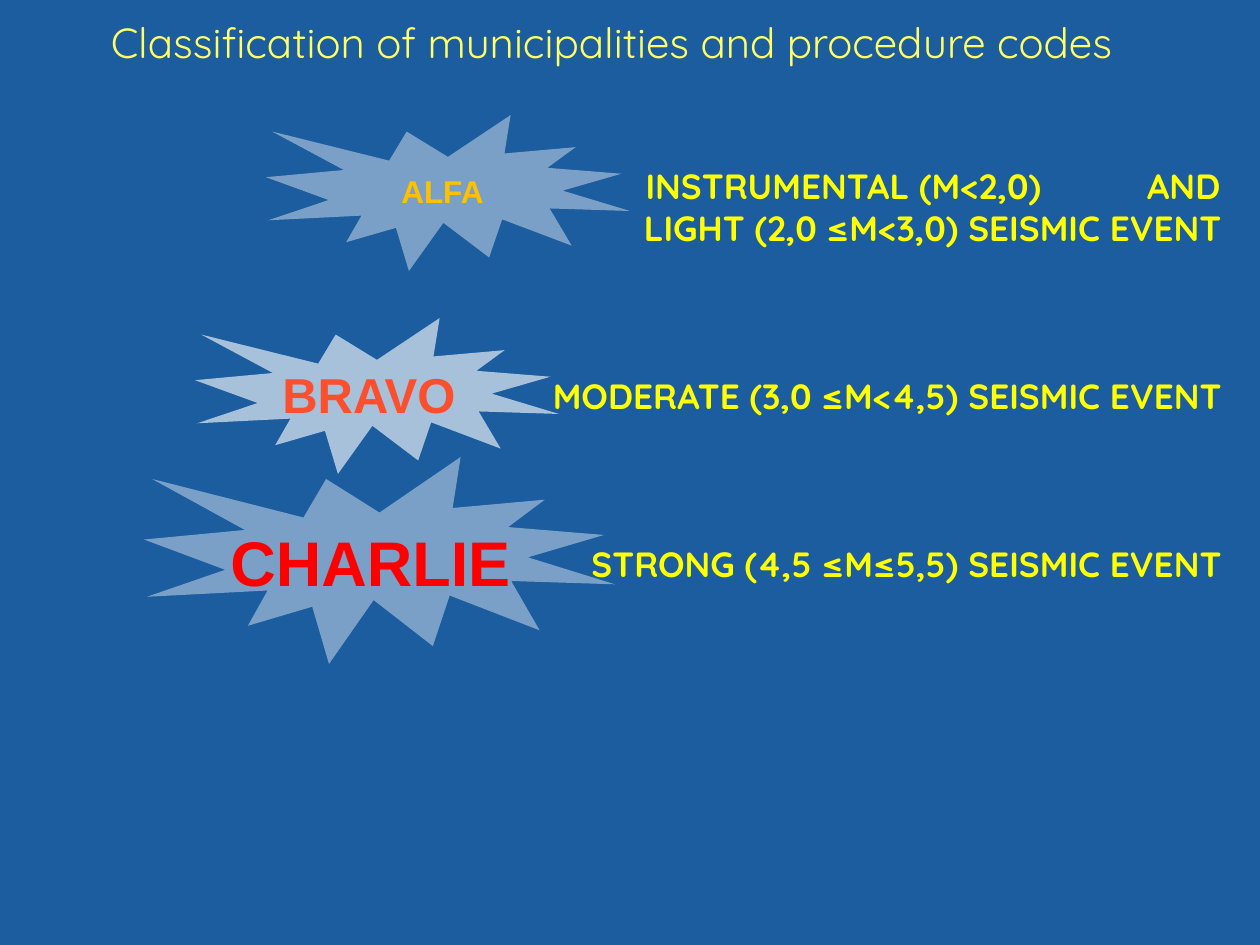
from lxml import etree
from pptx import Presentation
from pptx.dml.color import RGBColor
from pptx.enum.shapes import MSO_SHAPE
from pptx.enum.text import MSO_ANCHOR, MSO_AUTO_SIZE, PP_ALIGN
from pptx.oxml.ns import qn
from pptx.util import Emu, Pt

SEAL = MSO_SHAPE.EXPLOSION1
TOP = MSO_ANCHOR.TOP
GROW = MSO_AUTO_SIZE.SHAPE_TO_FIT_TEXT
LEFT, MID, RIGHT = PP_ALIGN.LEFT, PP_ALIGN.CENTER, PP_ALIGN.RIGHT
PX = 914400 // 126

THEME = {
    "back": "1B5D9F",
    "seal": "FFFFFF",
    "title": {"name": "Quicksand", "size": 24, "color": "FFFF66", "bold": False},
    "event": {"name": "Quicksand", "size": 20, "color": "FFFF00", "bold": True},
    "alfa": {"name": "Arial", "size": 18, "color": "FFC000", "bold": True},
    "bravo": {"name": "Arial", "size": 28, "color": "FB4F2D", "bold": True},
    "charlie": {"name": "Arial", "size": 36, "color": "FF0000", "bold": True},
}


def px(*nums):
    return [Emu(n * PX) for n in nums]


def write(par, text, style, align):
    par.alignment = align
    run = par.add_run()
    run.text = text
    for key, val in THEME[style].items():
        if key == "color":
            run.font.color.rgb = RGBColor.from_string(val)
        else:
            setattr(run.font, key, Pt(val) if key == "size" else val)
    return run


prs = Presentation()
prs.slide_width, prs.slide_height = px(1260, 945)
slide = prs.slides.add_slide(prs.slide_layouts[5])
fill = slide.background.fill
fill.solid()
fill.fore_color.rgb = RGBColor.from_string(THEME["back"])

title = slide.shapes.title
title.left, title.top, title.width, title.height = px(17, 10, 1189, 116)
title.text_frame.vertical_anchor = TOP
write(title.text_frame.paragraphs[0],
      "Classification of municipalities and procedure codes", "title", MID)

items = [
    ("seal", (195, 318, 364, 156), 62),
    ("seal", (266, 115, 364, 156), 42),
    ("events", (278, 158, 967, 522), None),
    ("label", (360, 166, 165, 50), ("ALFA", "alfa", MID)),
    ("label", (270, 358, 239, 72), ("BRAVO", "bravo", LEFT)),
    ("seal", (144, 457, 471, 207), 42),
    ("label", (218, 517, 350, 89), ("CHARLIE", "charlie", LEFT)),
]
events = [
    ("\tINSTRUMENTAL (M<2,0)\tAND", LEFT, 0),
    ("LIGHT (2,0 ≤M<3,0) SEISMIC EVENT", RIGHT, 0),
    ("MODERATE (3,0 ≤M<4,5) SEISMIC EVENT", RIGHT, 72),
    ("STRONG (4,5 ≤M≤5,5) SEISMIC EVENT", RIGHT, 72),
]

for kind, area, data in items:
    if kind == "seal":
        seal = slide.shapes.add_shape(SEAL, *px(*area))
        seal.shadow.inherit = False
        seal.line.fill.background()
        seal.fill.solid()
        seal.fill.fore_color.rgb = RGBColor.from_string(THEME["seal"])
        tone = seal.fill._xPr.find(".//" + qn("a:srgbClr"))
        etree.SubElement(tone, qn("a:alpha"), val=str(data * 1000))
        continue

    frame = slide.shapes.add_textbox(*px(*area)).text_frame
    frame.word_wrap = True
    frame.auto_size = GROW
    par = frame.paragraphs[0]
    if kind == "label":
        props = write(par, *data).font._element
        glow = etree.Element(qn("a:effectLst"))
        shade = etree.SubElement(glow, qn("a:outerShdw"), blurRad="38100",
                                 dist="38100", dir="2700000", algn="tl")
        tone = etree.SubElement(shade, qn("a:srgbClr"), val="000000")
        etree.SubElement(tone, qn("a:alpha"), val="43000")
        props.find(qn("a:solidFill")).addnext(glow)
        continue

    frame.margin_right = px(23)[0]
    tabs = etree.SubElement(par._p.get_or_add_pPr(), qn("a:tabLst"))
    for stop in px(751, 930):
        etree.SubElement(tabs, qn("a:tab"), pos=str(stop), algn="r")
    for num, (text, align, gap) in enumerate(events):
        par = frame.add_paragraph() if num else par
        if gap:
            par.space_before = Pt(gap)
        write(par, text, "event", align)

prs.save("out.pptx")
